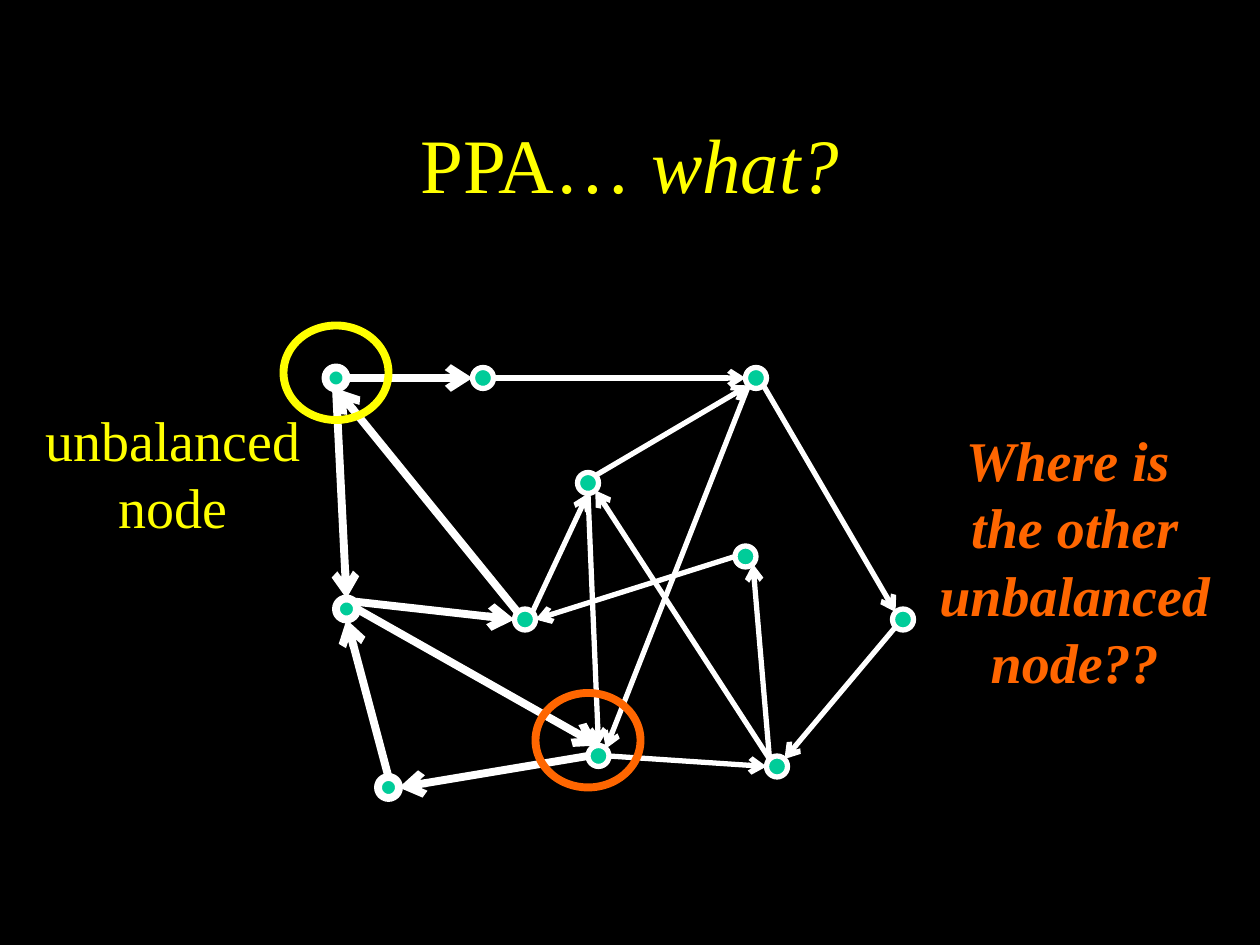
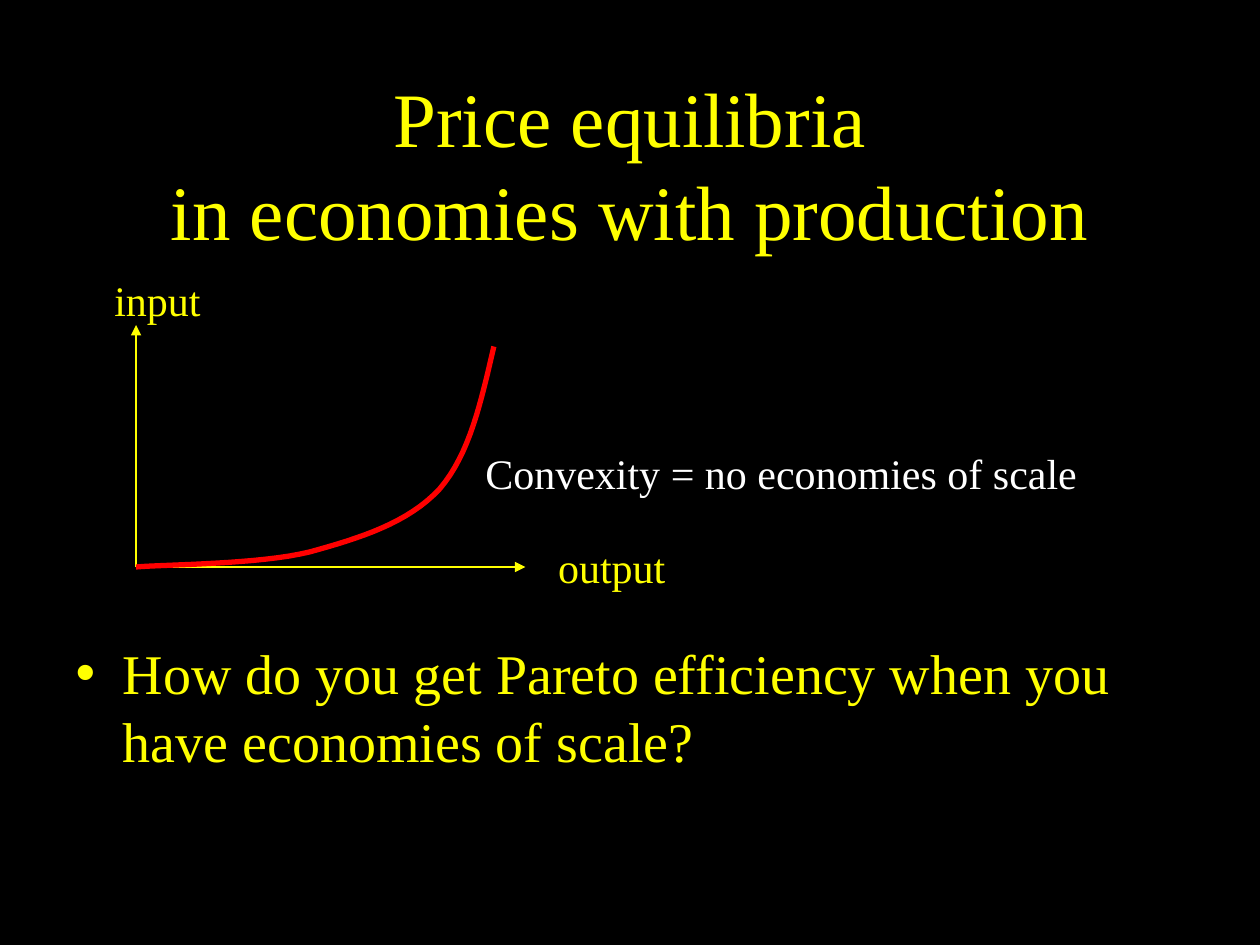
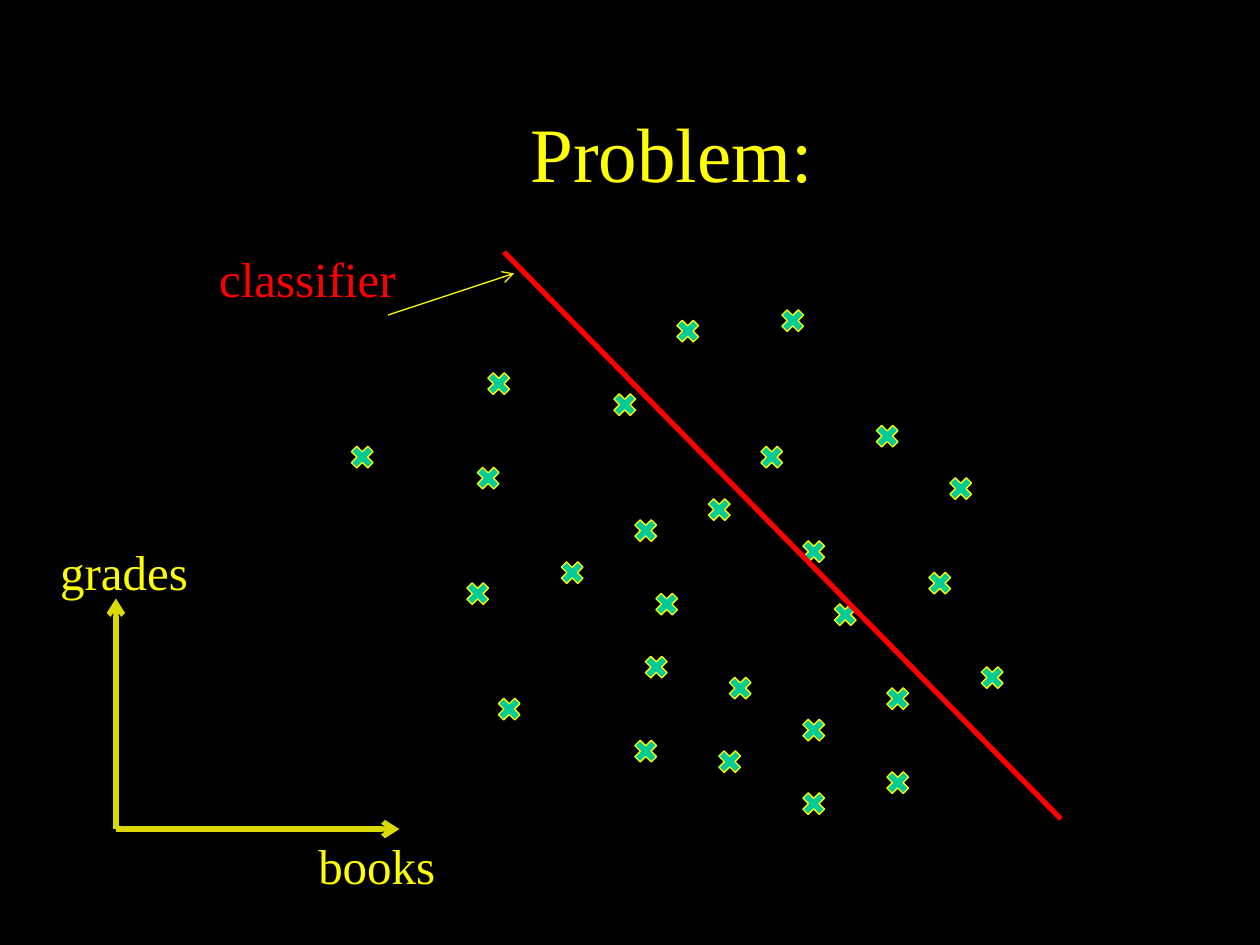
from math import sqrt

from lxml.etree import SubElement
from pptx import Presentation
from pptx.dml.color import RGBColor
from pptx.enum.shapes import MSO_CONNECTOR, MSO_SHAPE
from pptx.enum.text import MSO_ANCHOR, MSO_AUTO_SIZE, PP_ALIGN
from pptx.oxml.ns import qn
from pptx.util import Inches, Pt

# Shared style
FONT = "Times New Roman"
COLORS = {
    "background": "000000",
    "text": "FFFF00",
    "white": "FFFFFF",
    "teal": "00CC99",
    "orange": "FF6600",
    "red": "FF0000",
    "axis": "DADA00",
}
GRID = 1 / 12  # drawing grid, in inches
TITLE_BOX = (0.75, 0.67, 8.5, 1.25)
TITLE_ONLY, TITLE_AND_CONTENT = 5, 1

# Graph of slide 1: node centres in grid units, with outline width in points
NODES = {
    "start": (2, 6, 4.5),
    "top": (16, 6, 3),
    "top right": (42, 6, 3),
    "left": (3, 28, 4.5),
    "end": (27, 42, 3),
    "centre": (26, 16, 3),
    "hub": (20, 29, 3),
    "bottom left": (7, 45, 4.5),
    "inner right": (41, 23, 3),
    "bottom right": (44, 43, 3),
    "right": (56, 29, 3),
}
# Each edge leaves one compass point of a node and enters one of another
EDGES = [
    ("start", "E", "top", "W", 4.5),
    ("top", "E", "top right", "W", 3),
    ("top right", "SE", "right", "NW", 3),
    ("right", "SW", "bottom right", "NE", 3),
    ("bottom right", "NW", "inner right", "SE", 3),
    ("inner right", "W", "hub", "E", 3),
    ("hub", "NE", "centre", "S", 3),
    ("centre", "S", "end", "N", 3),
    ("end", "W", "bottom left", "E", 4.5),
    ("bottom left", "N", "left", "S", 4.5),
    ("left", "NE", "hub", "W", 4.5),
    ("hub", "NW", "start", "S", 4.5),
    ("start", "S", "left", "N", 4.5),
    ("left", "E", "end", "N", 4.5),
    ("end", "E", "bottom right", "W", 3),
    ("bottom right", "NW", "centre", "SE", 3),
    ("centre", "NE", "top right", "SW", 3),
    ("top right", "SW", "end", "NE", 3),
]
# Rings: node, offset from its centre in grid units, colour
RINGS = [("start", 0, -0.5, "text"), ("end", -1, -1.5, "orange")]

# Scatter of slide 3: top left corners in grid units
CROSSES = [
    (13, 6), (12, 15), (31, 1), (39, 13), (0, 13), (11, 26), (20, 24),
    (27, 20), (34, 18), (28, 33), (29, 27), (43, 22), (36, 35), (46, 28),
    (35, 42), (27, 41), (43, 39), (43, 46), (51, 36), (51, 44), (50, 11),
    (55, 25), (57, 16), (41, 0), (60, 34), (25, 8), (14, 37),
]

# Cost curve of slide 2: start point, then cubic pieces, relative to its box
CURVE_START = (2.84, 0)
CURVE_PIECES = [
    ((2.74, 0.43), (2.65, 0.85), (2.41, 1.13)),
    ((2.16, 1.4), (1.78, 1.52), (1.38, 1.63)),
    ((0.98, 1.73), (0.23, 1.73), (0, 1.75)),
]


def rgb(color):
    return RGBColor.from_string(COLORS[color])


def add_run(paragraph, text, size, color="text", bold=False, italic=False):
    run = paragraph.add_run()
    run.text = text
    font = run.font
    font.name, font.size = FONT, Pt(size)
    font.bold, font.italic = bold, italic
    font.color.rgb = rgb(color)


def move(shape, box):
    shape.left, shape.top, shape.width, shape.height = map(Inches, box)


def add_slide(presentation, layout_index, box, lines):
    """Add a slide; each title line is a list of (text, italic) runs."""
    slide = presentation.slides.add_slide(presentation.slide_layouts[layout_index])
    title = slide.shapes.title
    move(title, box)
    frame = title.text_frame
    frame.auto_size = MSO_AUTO_SIZE.NONE
    frame.vertical_anchor = MSO_ANCHOR.MIDDLE
    paragraph = frame.paragraphs[0]
    paragraph.alignment = PP_ALIGN.CENTER
    for index, runs in enumerate(lines):
        if index:
            paragraph.add_line_break()
        for text, italic in runs:
            add_run(paragraph, text, 44, italic=italic)
    return slide


def add_label(slide, box, lines, size, color="text", emphasis=False):
    frame = slide.shapes.add_textbox(*map(Inches, box)).text_frame
    frame.word_wrap = False
    frame.auto_size = MSO_AUTO_SIZE.SHAPE_TO_FIT_TEXT
    for index, line in enumerate(lines):
        paragraph = frame.add_paragraph() if index else frame.paragraphs[0]
        paragraph.alignment = PP_ALIGN.CENTER
        add_run(paragraph, line, size, color, emphasis, emphasis)


def add_line(slide, start, end, color, weight, head=None):
    connector = slide.shapes.add_connector(
        MSO_CONNECTOR.STRAIGHT, *map(Inches, (*start, *end)))
    connector.line.color.rgb = rgb(color)
    connector.line.width = Pt(weight)
    if head:
        SubElement(connector.line._get_or_add_ln(), qn("a:tailEnd"), type=head)
    SubElement(connector._element.spPr, qn("a:effectLst"))


def style_shape(shape, fill, line, weight):
    shape.shadow.inherit = False
    if fill:
        shape.fill.solid()
        shape.fill.fore_color.rgb = rgb(fill)
    else:
        shape.fill.background()
    shape.line.color.rgb = rgb(line)
    shape.line.width = Pt(weight)


def add_preset(slide, preset, box, fill, line, weight):
    shape = slide.shapes.add_shape(preset, *map(Inches, box))
    style_shape(shape, fill, line, weight)


def add_axes(slide, box, color, weight, head):
    """Draw both axes from the bottom left corner of the box."""
    left, top, width, height = box
    origin = (left, top + height)
    add_line(slide, origin, (left + width, top + height), color, weight, head)
    add_line(slide, origin, (left, top), color, weight, head)


def compass_point(center, direction):
    """Point on a node's rim, one grid unit from its centre."""
    x = ("E" in direction) - ("W" in direction)
    y = ("S" in direction) - ("N" in direction)
    reach = GRID / sqrt(x * x + y * y)
    return center[0] + x * reach, center[1] + y * reach


def add_graph(slide, left, top):
    centers = {name: (left + x * GRID, top + y * GRID)
               for name, (x, y, _) in NODES.items()}
    for name, (x, y) in centers.items():
        box = (x - GRID, y - GRID, 2 * GRID, 2 * GRID)
        add_preset(slide, MSO_SHAPE.OVAL, box, "teal", "white", NODES[name][2])
    for source, leave, target, enter, weight in EDGES:
        add_line(slide, compass_point(centers[source], leave),
                 compass_point(centers[target], enter), "white", weight, "arrow")
    width, height = 10 * GRID, 9 * GRID
    for name, dx, dy, color in RINGS:
        x, y = centers[name]
        box = (x + dx * GRID - width / 2, y + dy * GRID - height / 2, width, height)
        add_preset(slide, MSO_SHAPE.OVAL, box, None, color, 4.5)


def curve_points(steps=16):
    """Sample the cubic pieces of the cost curve."""
    points, start = [CURVE_START], CURVE_START
    for first, second, end in CURVE_PIECES:
        for step in range(1, steps + 1):
            t = step / steps
            u = 1 - t
            points.append(tuple(
                u**3 * a + 3 * u * u * t * b + 3 * u * t * t * c + t**3 * d
                for a, b, c, d in zip(start, first, second, end)))
        start = end
    return points


def add_cost_curve(slide, left, top):
    points = [(Inches(left + x), Inches(top + y)) for x, y in curve_points()]
    builder = slide.shapes.build_freeform(*points[0])
    builder.add_line_segments(points[1:], close=False)
    style_shape(builder.convert_to_shape(), None, "red", 3)


def add_bullet(slide, box, text):
    body = slide.placeholders[1]
    move(body, box)
    body.text_frame.auto_size = MSO_AUTO_SIZE.NONE
    paragraph = body.text_frame.paragraphs[0]
    paragraph.space_before = Pt(0)
    # The bullet takes the colour of its text
    add_run(paragraph, text, 32)


def add_scatter(slide, left, top):
    for x, y in CROSSES:
        box = (left + x * GRID, top + y * GRID, 0.25, 0.25)
        add_preset(slide, MSO_SHAPE.MATH_MULTIPLY, box, "teal", "text", 0.75)


def build_graph_slide(presentation):
    slide = add_slide(presentation, TITLE_ONLY, TITLE_BOX,
                      [[("PPA… ", False), ("what?", True)]])
    add_graph(slide, 2.5, 2.5)
    add_label(slide, (0.25, 3.17, 2.25, 1.18), ["unbalanced", "node"], 32)
    add_label(slide, (7.27, 3.33, 2.52, 2.26),
              ["Where is ", "the other", "unbalanced", "node??"],
              32, "orange", emphasis=True)


def build_economy_slide(presentation):
    slide = add_slide(presentation, TITLE_AND_CONTENT, TITLE_BOX,
                      [[("Price equilibria", False)],
                       [("in economies with production", False)]])
    add_bullet(slide, (0.5, 5.02, 8.5, 1.5),
               "How do you get Pareto efficiency when you have economies of scale?")
    add_axes(slide, (1.08, 2.58, 3.09, 1.92), "text", 0.75, "triangle")
    add_cost_curve(slide, 1.08, 2.75)
    add_label(slide, (3.73, 3.5, 4.94, 0.5),
              ["Convexity = no economies of scale"], 24, "white")
    add_label(slide, (0.8, 2.13, 0.9, 0.5), ["input"], 24)
    add_label(slide, (4.32, 4.25, 1.07, 0.5), ["output"], 24)


def build_classifier_slide(presentation):
    slide = add_slide(presentation, TITLE_ONLY, (1.08, 0.58, 8.5, 1.25),
                      [[("Problem:", False)]])
    add_scatter(slide, 2.75, 2.42)
    add_line(slide, (4, 2), (8.42, 6.5), "red", 3)
    add_axes(slide, (0.92, 4.75, 2.25, 1.83), "axis", 3, "arrow")
    add_label(slide, (2.42, 6.58, 1.14, 0.57), ["books"], 28)
    add_label(slide, (1.6, 1.92, 1.68, 0.57), ["classifier"], 28, "red")
    add_line(slide, (3.08, 2.5), (4.08, 2.17), "text", 0.75, "arrow")
    add_label(slide, (0.37, 4.25, 1.23, 0.57), ["grades"], 28)


def main():
    presentation = Presentation()
    presentation.slide_width, presentation.slide_height = Inches(10), Inches(7.5)
    background = presentation.slide_master.background.fill
    background.solid()
    background.fore_color.rgb = rgb("background")
    build_graph_slide(presentation)
    build_economy_slide(presentation)
    build_classifier_slide(presentation)
    presentation.save("out.pptx")


if __name__ == "__main__":
    main()
